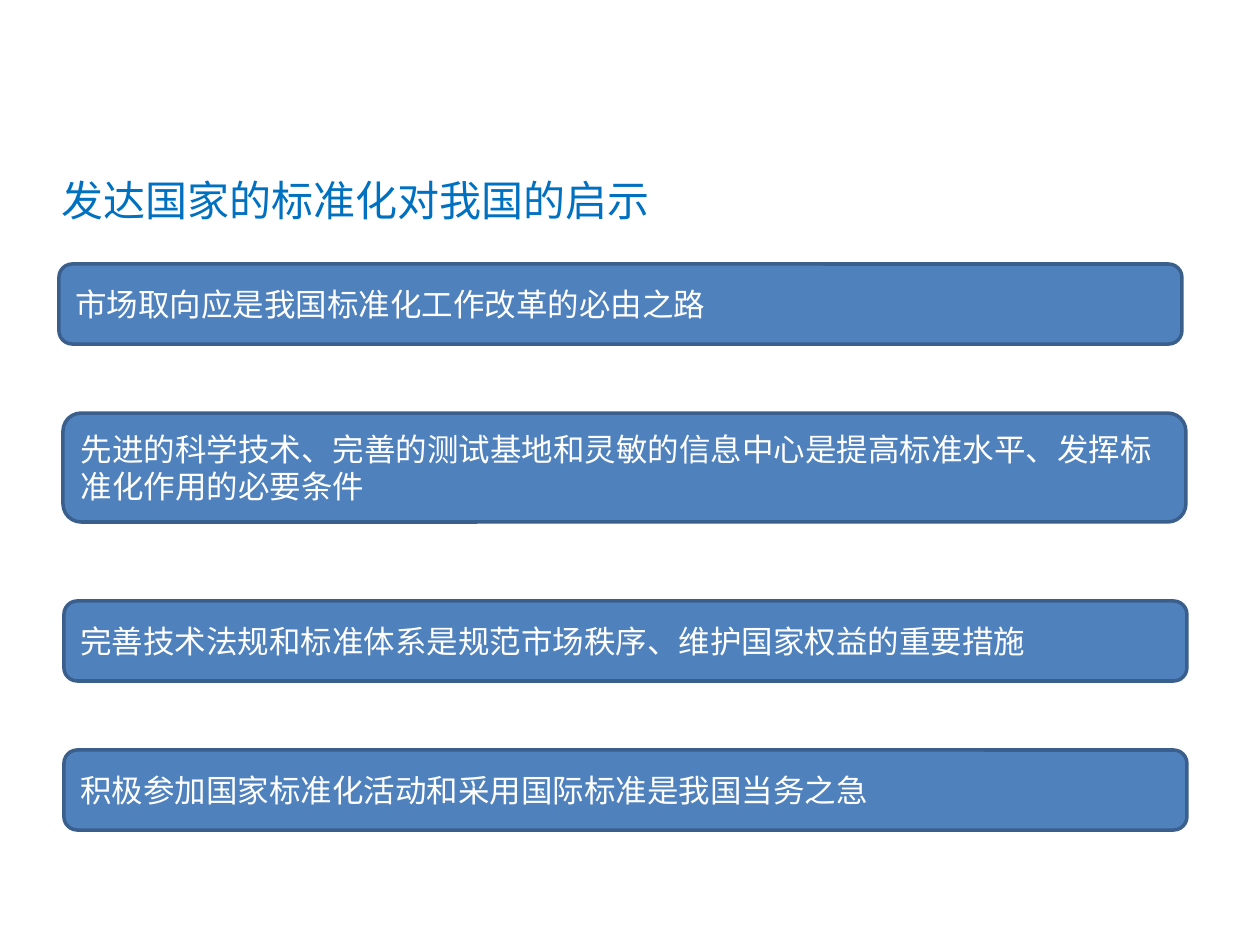
from lxml.etree import SubElement
from pptx import Presentation
from pptx.dml.color import RGBColor
from pptx.enum.shapes import MSO_SHAPE
from pptx.enum.text import MSO_ANCHOR, MSO_AUTO_SIZE, PP_ALIGN
from pptx.oxml.ns import qn
from pptx.util import Emu, Pt

PX_PER_INCH = 126
TYPEFACE = "Noto Sans CJK SC"
TITLE = "发达国家的标准化对我国的启示"
TITLE_BOX = (49, 168, 1131, 63)
LESSON_WIDTH = 1123
LESSONS = [
    (59, 264, 80, "市场取向应是我国标准化工作改革的必由之路"),
    (63, 413, 109, "先进的科学技术、完善的测试基地和灵敏的信息中心是提高标准水平、发挥标准化作用的必要条件"),
    (64, 601, 80, "完善技术法规和标准体系是规范市场秩序、维护国家权益的重要措施"),
    (64, 750, 80, "积极参加国家标准化活动和采用国际标准是我国当务之急"),
]


def px(length):
    """Turn pixels into EMU."""
    return Emu(round(length * 914400 / PX_PER_INCH))


def color(hex_code):
    """Turn a hex string into a colour."""
    return RGBColor.from_string(hex_code)


def write_text(frame, wording, size, hex_code, anchor):
    """Write one left-aligned paragraph into a text frame."""
    frame_format = {
        "word_wrap": True,
        "auto_size": MSO_AUTO_SIZE.NONE,
        "vertical_anchor": anchor,
    }
    for name, value in frame_format.items():
        setattr(frame, name, value)
    paragraph = frame.paragraphs[0]
    paragraph.alignment = PP_ALIGN.LEFT
    run = paragraph.add_run()
    run.text = wording
    for name, value in {"name": TYPEFACE, "size": Pt(size)}.items():
        setattr(run.font, name, value)
    run.font.color.rgb = color(hex_code)
    SubElement(run.font._element, qn("a:ea"), typeface=TYPEFACE)


def place_title(slide, box):
    """Move the title placeholder into its box and fill it."""
    title = slide.shapes.title
    for name, length in zip(("left", "top", "width", "height"), box):
        setattr(title, name, px(length))
    write_text(title.text_frame, TITLE, 24, "0070C0", MSO_ANCHOR.TOP)


def add_lesson(slide, box, wording):
    """Draw one rounded bar holding a lesson."""
    lesson = slide.shapes.add_shape(MSO_SHAPE.ROUNDED_RECTANGLE, *map(px, box))
    lesson.shadow.inherit = False
    lesson.fill.solid()
    lesson.fill.fore_color.rgb = color("4F81BD")
    lesson.line.color.rgb = color("3A5F8C")
    lesson.line.width = Pt(2)
    write_text(lesson.text_frame, wording, 18, "FFFFFF", MSO_ANCHOR.MIDDLE)


def main():
    """Build the slide and save it."""
    presentation = Presentation()
    presentation.slide_width = px(1260)
    presentation.slide_height = px(945)
    slide = presentation.slides.add_slide(presentation.slide_layouts.get_by_name("Title Only"))
    place_title(slide, TITLE_BOX)
    for left, top, height, wording in LESSONS:
        add_lesson(slide, (left, top, LESSON_WIDTH, height), wording)
    presentation.save("out.pptx")


if __name__ == "__main__":
    main()
